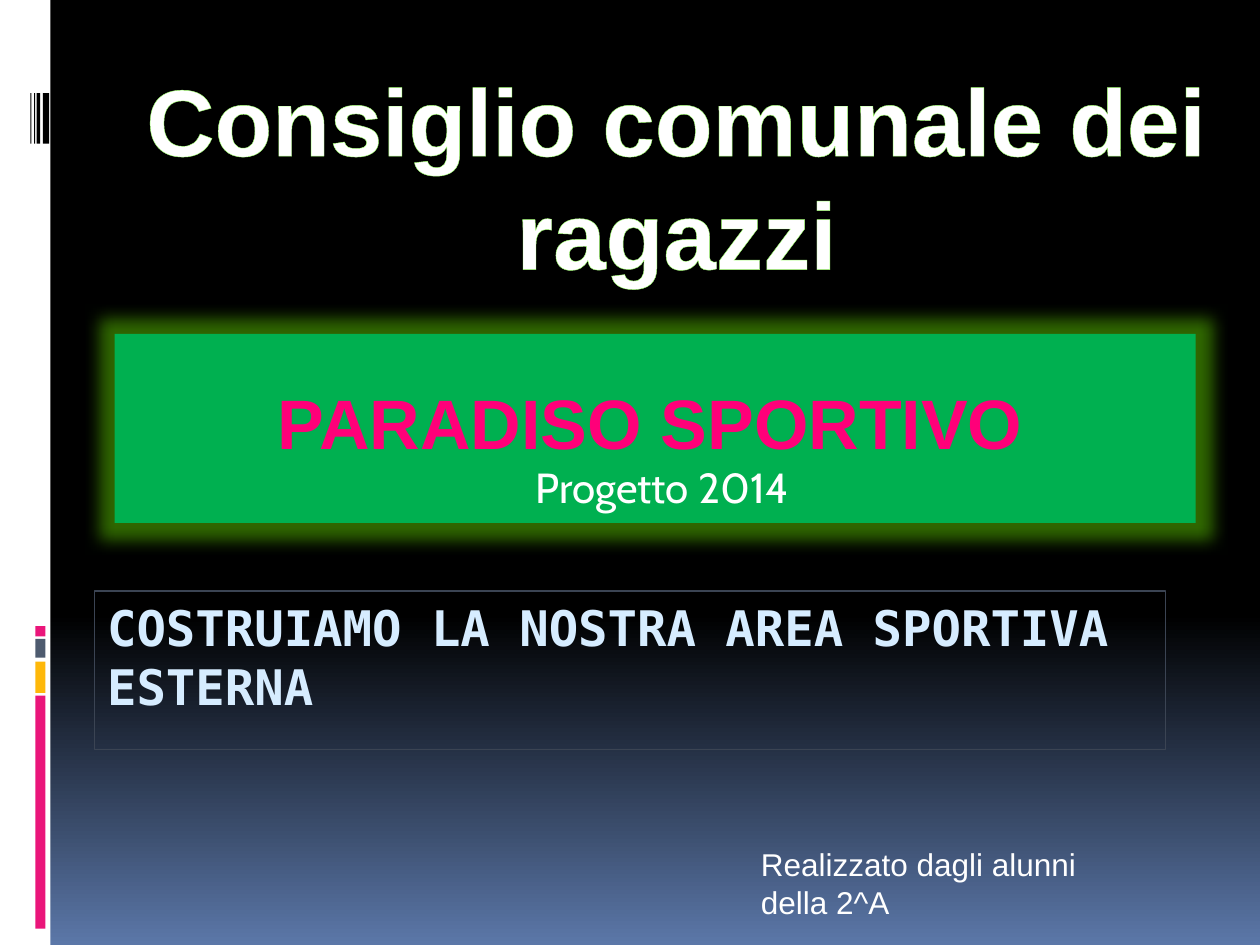
from lxml import etree
from pptx import Presentation
from pptx.dml.color import RGBColor
from pptx.enum.shapes import MSO_SHAPE
from pptx.enum.text import MSO_ANCHOR, MSO_AUTO_SIZE, PP_ALIGN
from pptx.oxml.ns import qn
from pptx.util import Inches, Pt

RECT = MSO_SHAPE.RECTANGLE
TOP, BOTTOM = MSO_ANCHOR.TOP, MSO_ANCHOR.BOTTOM
LEFT, CENTER = PP_ALIGN.LEFT, PP_ALIGN.CENTER
FIXED = MSO_AUTO_SIZE.NONE

HEX = {
    "white": "FFFFFF", "black": "000000", "blue": "5B77A8",
    "pink": "EA157A", "gold": "FEB80A", "slate": "4E5B6F",
    "edge": "3B4453", "ice": "D6ECFF", "green": "00B050",
    "glow": "76FF00", "lime": "A1FF70", "rose": "FF0079",
}
BARS = [
    ("white", 0, 0, 0.4, 7.5),
    ("black", 0.34, 0.74, 0.05, 0.4),
    ("black", 0.29, 0.74, 0.03, 0.4),
    ("black", 0.27, 0.74, 0.01, 0.4),
    ("black", 0.24, 0.74, 0.01, 0.4),
    ("pink", 0.28, 5.52, 0.08, 1.85),
    ("gold", 0.28, 5.25, 0.08, 0.25),
    ("slate", 0.28, 5.07, 0.08, 0.15),
    ("pink", 0.28, 4.97, 0.08, 0.08),
]
PAD = (0.1, 0.05, 0.1, 0.05)
TEXTS = {
    "title": dict(
        text="COSTRUIAMO LA NOSTRA AREA SPORTIVA ESTERNA",
        at=(0.75, 4.69, 8.5, 1.26), pad=PAD, anchor=TOP, color="ice",
        font=dict(name="DejaVu Sans Mono", size=Pt(28), bold=True),
        para=dict(alignment=LEFT)),
    "sub": dict(
        text="Progetto 2014",
        at=(0.91, 2.65, 8.58, 1.5), pad=(0.21, 0.05, 0.1, 0.08),
        anchor=BOTTOM, color="white",
        font=dict(name="Cabin", size=Pt(24), bold=False),
        para=dict(alignment=CENTER, line_spacing=0.9, space_before=Pt(0))),
    "council": dict(
        text="Consiglio comunale dei ragazzi",
        at=(0, 0.44, 10.74, 1.92), pad=PAD, anchor=TOP, color="white",
        font=dict(name="Arial", size=Pt(54), bold=True),
        para=dict(alignment=CENTER)),
    "credit": dict(
        text="Realizzato dagli alunni della 2^A",
        at=(5.94, 6.66, 3.15, 0.71), pad=PAD, anchor=TOP, color="white",
        font=dict(name="Arial", size=Pt(18), bold=False),
        para=dict(alignment=LEFT)),
    "project": dict(
        text="PARADISO SPORTIVO",
        at=(0.87, 2.96, 8.27, 0.77), pad=(0.41, 0.05, 0.1, 0.05),
        anchor=TOP, color="rose",
        font=dict(name="Arial", size=Pt(40), bold=True),
        para=dict(alignment=CENTER)),
}


def rgb(name):
    return RGBColor.from_string(HEX[name])


def assign(item, values):
    for key, value in values.items():
        setattr(item, key, value)


def place(shape, at):
    keys = ("left", "top", "width", "height")
    assign(shape, dict(zip(keys, map(Inches, at))))


def write(shape, data):
    place(shape, data["at"])
    frame = shape.text_frame
    frame.text = data["text"]
    assign(frame, dict(word_wrap=True, auto_size=FIXED,
                       vertical_anchor=data["anchor"]))
    sides = ("left", "top", "right", "bottom")
    for side, pad in zip(sides, data["pad"]):
        setattr(frame, f"margin_{side}", Inches(pad))
    para = frame.paragraphs[0]
    assign(para, data["para"])
    font = para.runs[0].font
    assign(font, data["font"])
    font.color.rgb = rgb(data["color"])


def outline(shape, color, width):
    props = shape.text_frame.paragraphs[0].runs[0].font._element
    line = etree.Element(qn("a:ln"), w=str(Pt(width)))
    fill = etree.SubElement(line, qn("a:solidFill"))
    etree.SubElement(fill, qn("a:srgbClr"), val=HEX[color])
    props.insert(0, line)


def glow(shape, color, size, alpha):
    effects = etree.SubElement(shape._element.spPr, qn("a:effectLst"))
    halo = etree.SubElement(effects, qn("a:glow"), rad=str(Inches(size)))
    tint = etree.SubElement(halo, qn("a:srgbClr"), val=HEX[color])
    etree.SubElement(tint, qn("a:alpha"), val=str(alpha * 1000))


def main():
    deck = Presentation()
    assign(deck, dict(slide_width=Inches(10), slide_height=Inches(7.5)))
    slide = deck.slides.add_slide(deck.slide_layouts[0])

    back = slide.background.fill
    back.gradient()
    back.gradient_angle = 270
    stops = [(0.65, "black"), (1, "blue")]
    for stop, (spot, color) in zip(back.gradient_stops, stops):
        stop.position = spot
        stop.color.rgb = rgb(color)

    for color, *at in BARS:
        bar = slide.shapes.add_shape(RECT, *map(Inches, at))
        bar.shadow.inherit = False
        bar.fill.solid()
        bar.fill.fore_color.rgb = rgb(color)
        bar.line.fill.background()

    boxes = {"title": slide.shapes.title, "sub": slide.placeholders[1]}
    for name, data in TEXTS.items():
        if name not in boxes:
            boxes[name] = slide.shapes.add_textbox(0, 0, 0, 0)
        write(boxes[name], data)

    boxes["title"].line.color.rgb = rgb("edge")
    boxes["title"].line.width = Pt(0.75)
    boxes["sub"].fill.solid()
    boxes["sub"].fill.fore_color.rgb = rgb("green")
    glow(boxes["sub"], "glow", 0.25, 40)
    outline(boxes["council"], "lime", 2.48)
    deck.save("out.pptx")


if __name__ == "__main__":
    main()
